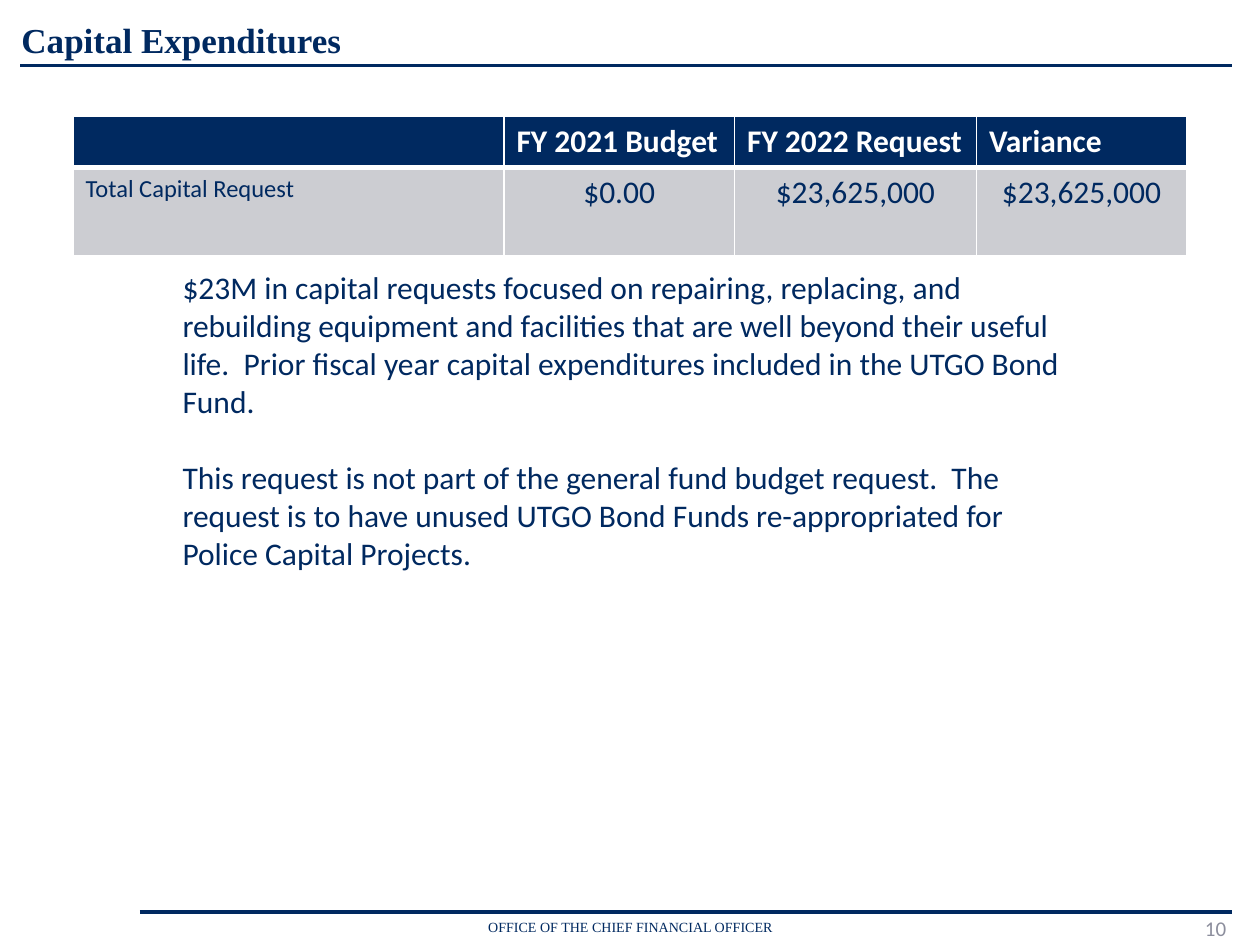
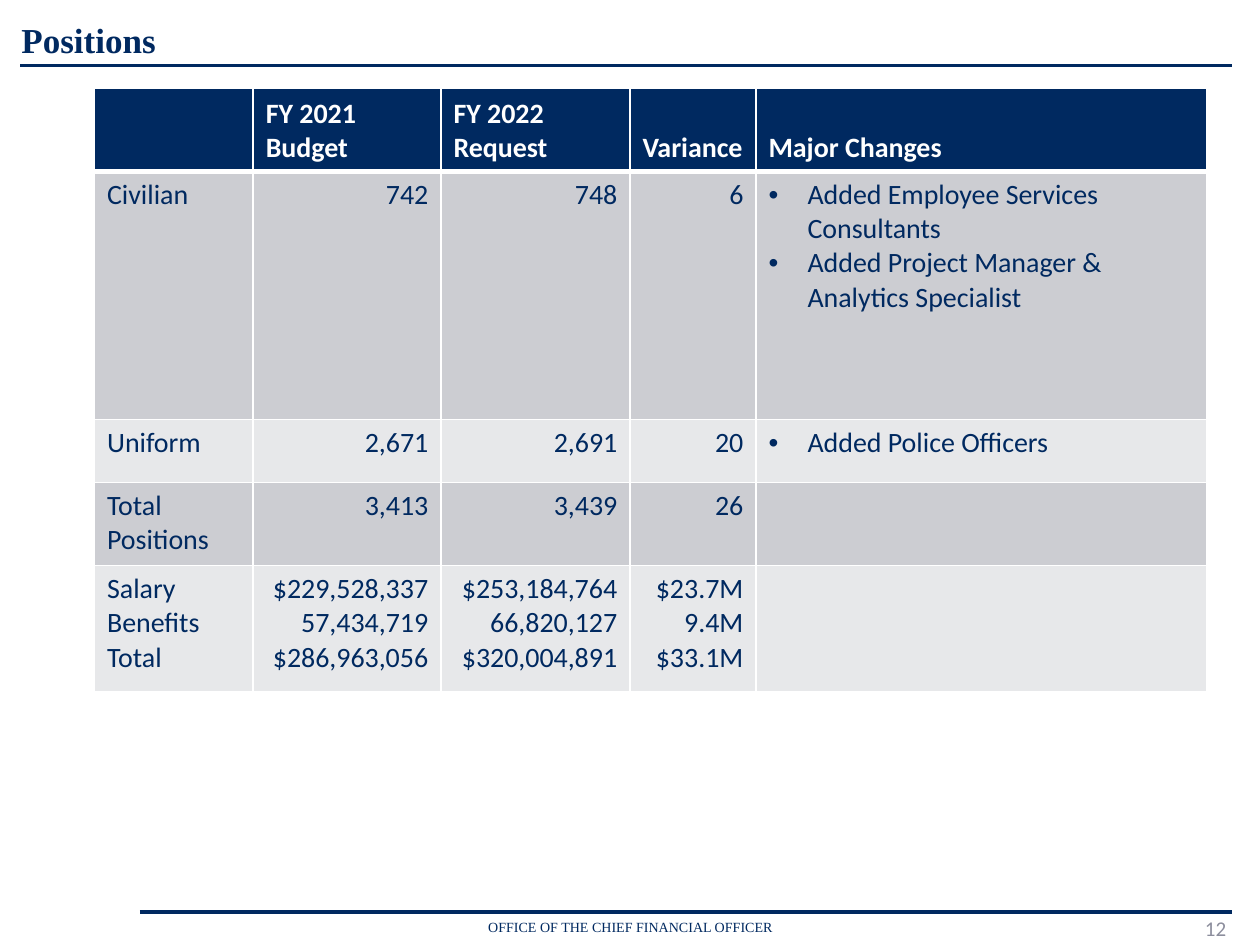
from itertools import product
from lxml import etree
from pptx import Presentation
from pptx import util as u
from pptx.dml.color import RGBColor
from pptx.enum import shapes, text
from pptx.oxml import ns

COLOURS = {"navy": "002960", "white": "FFFFFF", "grey": "8C8E9D",
           "dark band": "CCCDD2", "light band": "E7E8EA"}
ALIGN = {"l": text.PP_ALIGN.LEFT, "c": text.PP_ALIGN.CENTER, "r": text.PP_ALIGN.RIGHT}
LEFT, RIGHT, TOP_RULE, BOTTOM_RULE = 0.16, 9.78, 0.52, 7.24


def rgb(name):
    return RGBColor.from_string(COLOURS[name])


def write(frame, content, size=18, font="Calibri", colour="navy", bold=False,
          align="l", anchor=text.MSO_ANCHOR.TOP, gap=0, bullet=False):
    frame.word_wrap = True
    frame.vertical_anchor = anchor
    for number, line in enumerate(content.split("\n")):
        paragraph = frame.add_paragraph() if number else frame.paragraphs[0]
        paragraph.alignment = ALIGN[align]
        paragraph.space_before = u.Pt(gap if number else 0)
        if bullet:
            properties = paragraph._p.get_or_add_pPr()
            properties.set("marL", str(u.Inches(0.31)))
            properties.set("indent", str(u.Inches(-0.31)))
            etree.SubElement(properties, ns.qn("a:buFont"), typeface="Arial")
            etree.SubElement(properties, ns.qn("a:buChar"), char="•")
        run = paragraph.add_run()
        run.text = line
        run.font.size, run.font.name, run.font.bold = u.Pt(size), font, bold
        run.font.color.rgb = rgb(colour)


pages = [
    {"title": "Capital Expenditures", "number": "10",
     "corner": (0.58, 0.92), "columns": [3.42, 1.83, 1.92, 1.67], "rows": [0.41, 0.7],
     "size": 18, "label size": 14, "aligns": "lccc",
     "cells": [["", "FY 2021 Budget", "FY 2022 Request", "Variance"],
               ["Total Capital Request", "$0.00", "$23,625,000", "$23,625,000"]],
     "summary": "$23M in capital requests focused on repairing, replacing, and rebuilding "
                "equipment and facilities that are well beyond their useful life.  Prior fiscal "
                "year capital expenditures included in the UTGO Bond Fund.\n"
                "This request is not part of the general fund budget request.  The request is to "
                "have unused UTGO Bond Funds re-appropriated for Police Capital Projects."},
    {"title": "Positions", "number": "12",
     "corner": (0.75, 0.7), "columns": [1.26, 1.49, 1.5, 1, 3.58],
     "rows": [0.66, 1.97, 0.5, 0.66, 1],
     "size": 16, "label size": 16, "aligns": "lrrrl",
     "cells": [["", "FY 2021 Budget", "FY 2022 Request", "Variance", "Major Changes"],
               ["Civilian", "742", "748", "6",
                "Added Employee Services Consultants\nAdded Project Manager & Analytics Specialist"],
               ["Uniform", "2,671", "2,691", "20", "Added Police Officers"],
               ["Total Positions", "3,413", "3,439", "26", ""],
               ["Salary\nBenefits\nTotal", "$229,528,337\n57,434,719\n$286,963,056",
                "$253,184,764\n66,820,127\n$320,004,891", "$23.7M\n9.4M\n$33.1M", ""]]},
]

deck = Presentation()
deck.slide_width, deck.slide_height = u.Inches(10), u.Inches(7.5)
title_only = deck.slide_layouts[5]

for page in pages:
    slide = deck.slides.add_slide(title_only)

    for start, height in ((LEFT, TOP_RULE), (1.11, BOTTOM_RULE)):
        rule = slide.shapes.add_connector(
            shapes.MSO_CONNECTOR.STRAIGHT,
            *map(u.Inches, (start, height, RIGHT, height)))
        rule.line.color.rgb, rule.line.width = rgb("navy"), u.Pt(2)
        etree.SubElement(rule._element.spPr, ns.qn("a:effectLst"))

    title = slide.shapes.title
    title.left, title.top, title.width, title.height = map(u.Inches, (0.17, 0.15, 9.62, 0.34))
    heading = title.text_frame
    heading.margin_left = heading.margin_right = heading.margin_top = heading.margin_bottom = 0
    heading.auto_size = text.MSO_AUTO_SIZE.NONE
    write(heading, page["title"], size=20, font="Times New Roman", bold=True)

    office = slide.shapes.add_textbox(*map(u.Inches, (2.56, BOTTOM_RULE, 4.89, 0.24)))
    write(office.text_frame, "OFFICE OF THE CHIEF FINANCIAL OFFICER",
          size=8, font="Times New Roman", align="c")
    page_number = slide.shapes.add_textbox(*map(u.Inches, (7.58, 7.17, 2.25, 0.4)))
    write(page_number.text_frame, page["number"], size=12, colour="grey",
          align="r", anchor=text.MSO_ANCHOR.MIDDLE)

    columns, rows = page["columns"], page["rows"]
    budget = slide.shapes.add_table(
        len(rows), len(columns),
        *map(u.Inches, (*page["corner"], sum(columns), sum(rows)))).table
    for column, width in zip(budget.columns, columns):
        column.width = u.Inches(width)
    for row, height in zip(budget.rows, rows):
        row.height = u.Inches(height)

    for r, c in product(range(len(rows)), range(len(columns))):
        cell, content = budget.cell(r, c), page["cells"][r][c]
        header = r == 0
        borders = {"lnL": 1, "lnR": 1, "lnT": 3 if r == 1 else 1, "lnB": 3 if header else 1}
        for side, points in borders.items():
            border = etree.SubElement(cell._tc.get_or_add_tcPr(), ns.qn("a:" + side),
                                      w=str(u.Pt(points)))
            paint = etree.SubElement(border, ns.qn("a:solidFill"))
            etree.SubElement(paint, ns.qn("a:srgbClr"), val=COLOURS["white"])
        cell.fill.solid()
        cell.fill.fore_color.rgb = rgb(
            "navy" if header else "dark band" if r % 2 else "light band")
        if not content:
            continue
        if header:
            write(cell.text_frame, content, size=page["size"], colour="white", bold=True)
            cell.vertical_anchor = text.MSO_ANCHOR.BOTTOM
        else:
            write(cell.text_frame, content, size=page["size" if c else "label size"],
                  align=page["aligns"][c], bullet=c == 4)

    if "summary" in page:
        summary = slide.shapes.add_textbox(*map(u.Inches, (1.35, 2.08, 7.25, 2.52)))
        write(summary.text_frame, page["summary"], gap=22)

deck.save("out.pptx")
